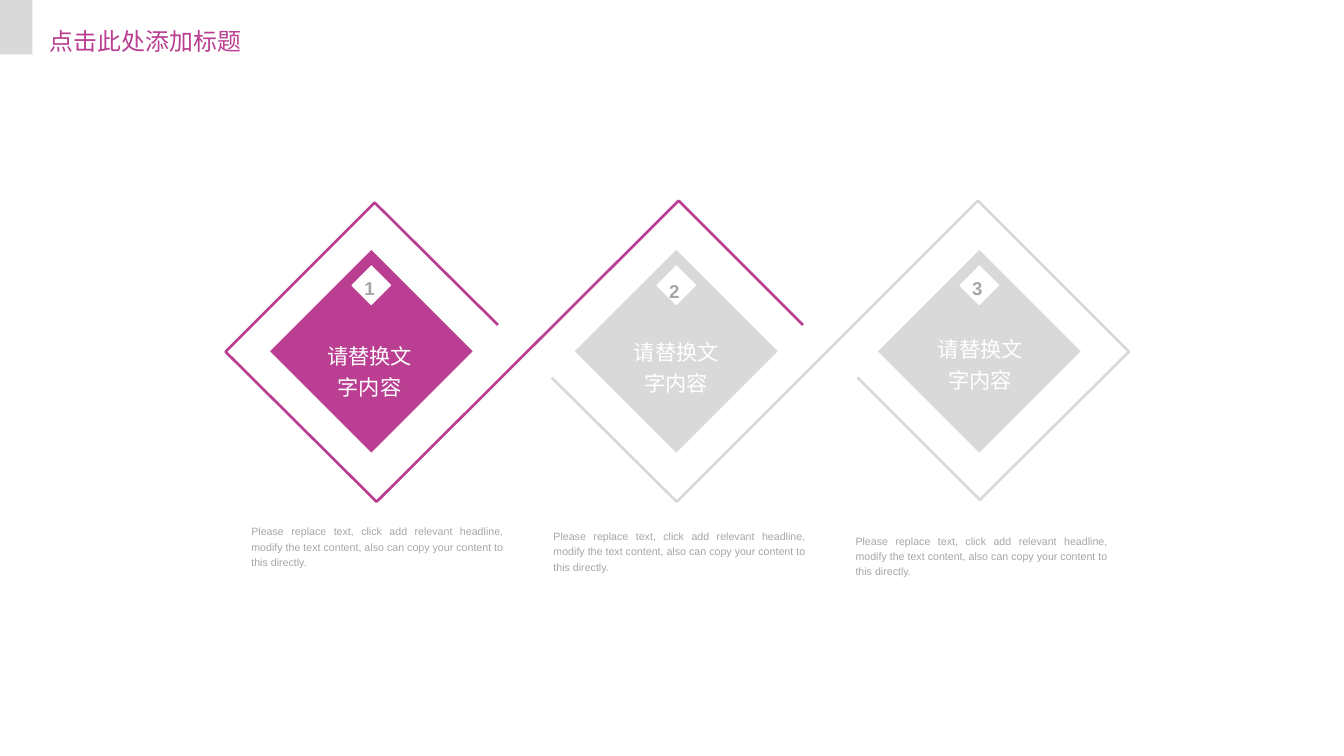
from lxml import etree
from pptx import Presentation
from pptx.dml.color import RGBColor
from pptx.enum.shapes import MSO_SHAPE
from pptx.enum.text import MSO_ANCHOR, MSO_AUTO_SIZE, PP_ALIGN
from pptx.oxml.ns import qn
from pptx.util import Inches, Pt

RECTANGLE = MSO_SHAPE.RECTANGLE
TOP, MIDDLE = MSO_ANCHOR.TOP, MSO_ANCHOR.MIDDLE
LEFT, CENTER, JUSTIFY = PP_ALIGN.LEFT, PP_ALIGN.CENTER, PP_ALIGN.JUSTIFY
NO_AUTOFIT = MSO_AUTO_SIZE.NONE
PURPLE, LIGHT_GRAY, TEXT_GRAY, WHITE = "BA3E91", "D9D9D9", "A6A6A6", "FFFFFF"
CJK_FONT = "Noto Sans CJK SC"
LABEL = "请替换文字内容"
DESCRIPTION = (
    "Please replace text, click add relevant headline, modify the text content, "
    "also can copy your content to this directly."
)


def color(value):
    return RGBColor.from_string(value)


def write(shape, text, size, text_color, alignment, anchor=TOP, font="Arial",
          spacing=1.2, margins=(0, 0), wrap=True, bold=False):
    frame = shape.text_frame
    frame.text = text
    frame.auto_size = NO_AUTOFIT
    frame.word_wrap = wrap
    frame.vertical_anchor = anchor
    frame.margin_left = frame.margin_right = Inches(margins[0])
    frame.margin_top = frame.margin_bottom = Inches(margins[1])
    paragraph = frame.paragraphs[0]
    paragraph.alignment = alignment
    paragraph.line_spacing = spacing
    run = paragraph.runs[0]
    run.font.size = Pt(size)
    run.font.bold = bold
    run.font.color.rgb = color(text_color)
    run.font.name = font
    east_asian = etree.SubElement(run.font._element, qn("a:ea"))
    east_asian.set("typeface", CJK_FONT)


presentation = Presentation()
presentation.slide_width = Inches(14.06)
presentation.slide_height = Inches(7.91)
slide = presentation.slides.add_slide(presentation.slide_layouts[5])
shapes = slide.shapes

title = shapes.title
title.left, title.top = Inches(0.42), Inches(0.23)
title.width, title.height = Inches(2.36), Inches(0.39)
write(title, "点击此处添加标题", 18, PURPLE, LEFT, font=CJK_FONT,
      spacing=1.0, margins=(0.1, 0.05))

corner_block = shapes.add_shape(RECTANGLE, 0, 0, Inches(0.34), Inches(0.57))
corner_block.shadow.inherit = False
corner_block.fill.solid()
corner_block.fill.fore_color.rgb = color(LIGHT_GRAY)
corner_block.line.fill.background()

ribbons = [
    (PURPLE, [(8.4, 3.4), (7.1, 2.1), (3.94, 5.25), (2.36, 3.68), (3.92, 2.12), (5.21, 3.4)]),
    (LIGHT_GRAY, [(5.77, 3.95), (7.08, 5.25), (10.23, 2.1), (11.81, 3.68), (10.25, 5.23), (8.97, 3.95)]),
]
for ribbon_color, points in ribbons:
    corners = [(Inches(x), Inches(y)) for x, y in points]
    builder = shapes.build_freeform(*corners[0])
    builder.add_line_segments(corners[1:], close=False)
    ribbon = builder.convert_to_shape()
    ribbon.shadow.inherit = False
    ribbon.fill.background()
    ribbon.line.color.rgb = color(ribbon_color)
    ribbon.line.width = Pt(2)

cards = [
    (3.13, PURPLE, 2.86, MIDDLE, 3.37, 3.54),
    (6.32, LIGHT_GRAY, 2.88, TOP, 6.58, 3.5),
    (9.49, LIGHT_GRAY, 2.86, MIDDLE, 9.76, 3.47),
]
for index, (left, card_color, number_top, number_anchor, label_left, label_top) in enumerate(cards):
    diamonds = [
        (left, 2.92, 1.51, card_color),
        (left + 0.61, 2.84, 0.29, WHITE),
    ]
    for diamond_left, diamond_top, side, fill_color in diamonds:
        diamond = shapes.add_shape(RECTANGLE, Inches(diamond_left), Inches(diamond_top),
                                   Inches(side), Inches(side))
        diamond.rotation = 315
        diamond.shadow.inherit = False
        diamond.fill.solid()
        diamond.fill.fore_color.rgb = color(fill_color)
        diamond.line.color.rgb = color(WHITE)
        diamond.line.width = Pt(0.5)

    number = shapes.add_textbox(Inches(left + 0.68), Inches(number_top), Inches(0.11), Inches(0.26))
    write(number, str(index + 1), 14, TEXT_GRAY, CENTER, anchor=number_anchor,
          wrap=False, bold=True)

    label = shapes.add_textbox(Inches(label_left), Inches(label_top), Inches(0.99), Inches(0.62))
    write(label, LABEL, 16, WHITE, CENTER)

    description = shapes.add_textbox(Inches(2.63 + 3.16 * index), Inches(5.47 + 0.05 * index),
                                     Inches(2.64), Inches(0.47))
    write(description, DESCRIPTION, 8, TEXT_GRAY, JUSTIFY)

presentation.save("out.pptx")
